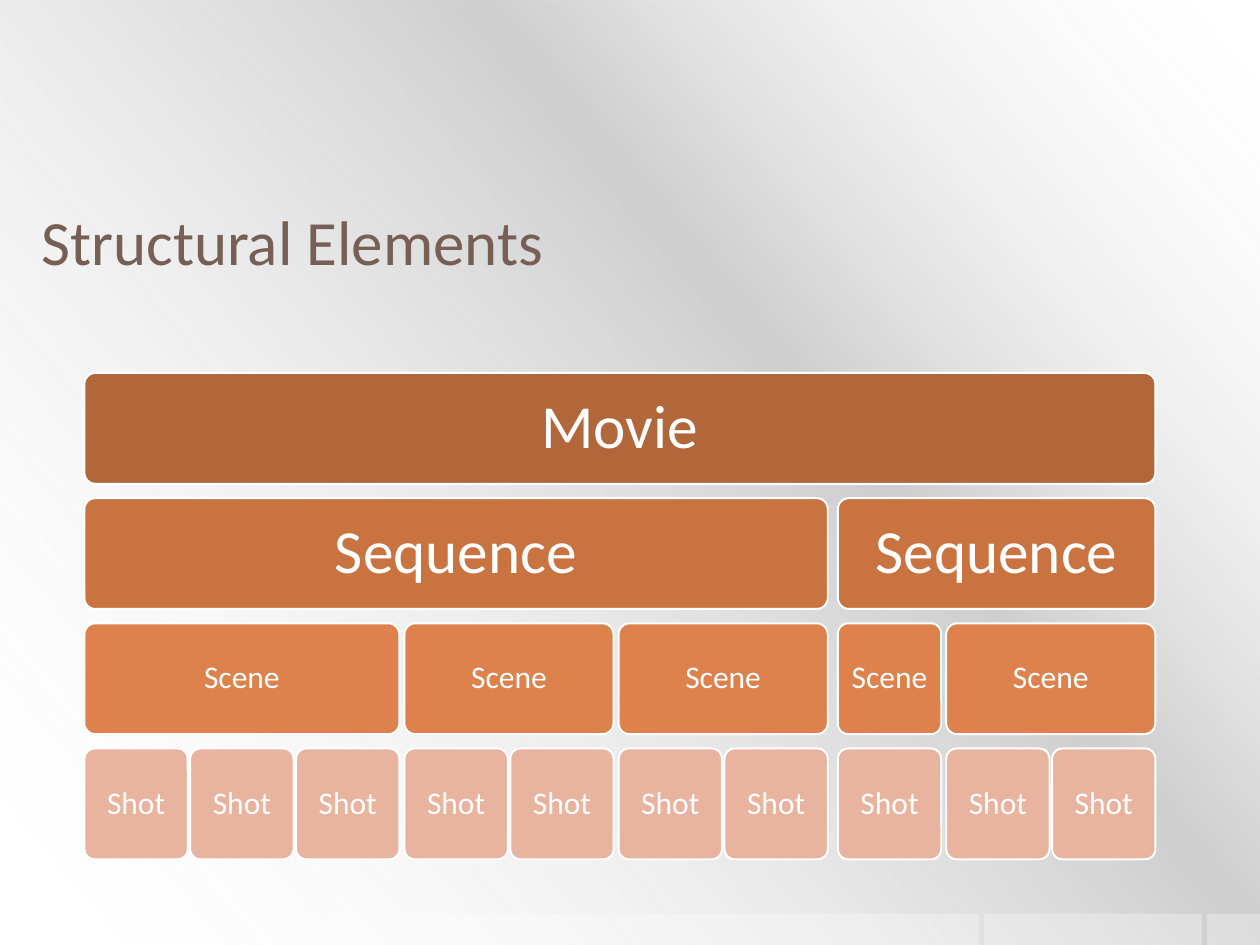
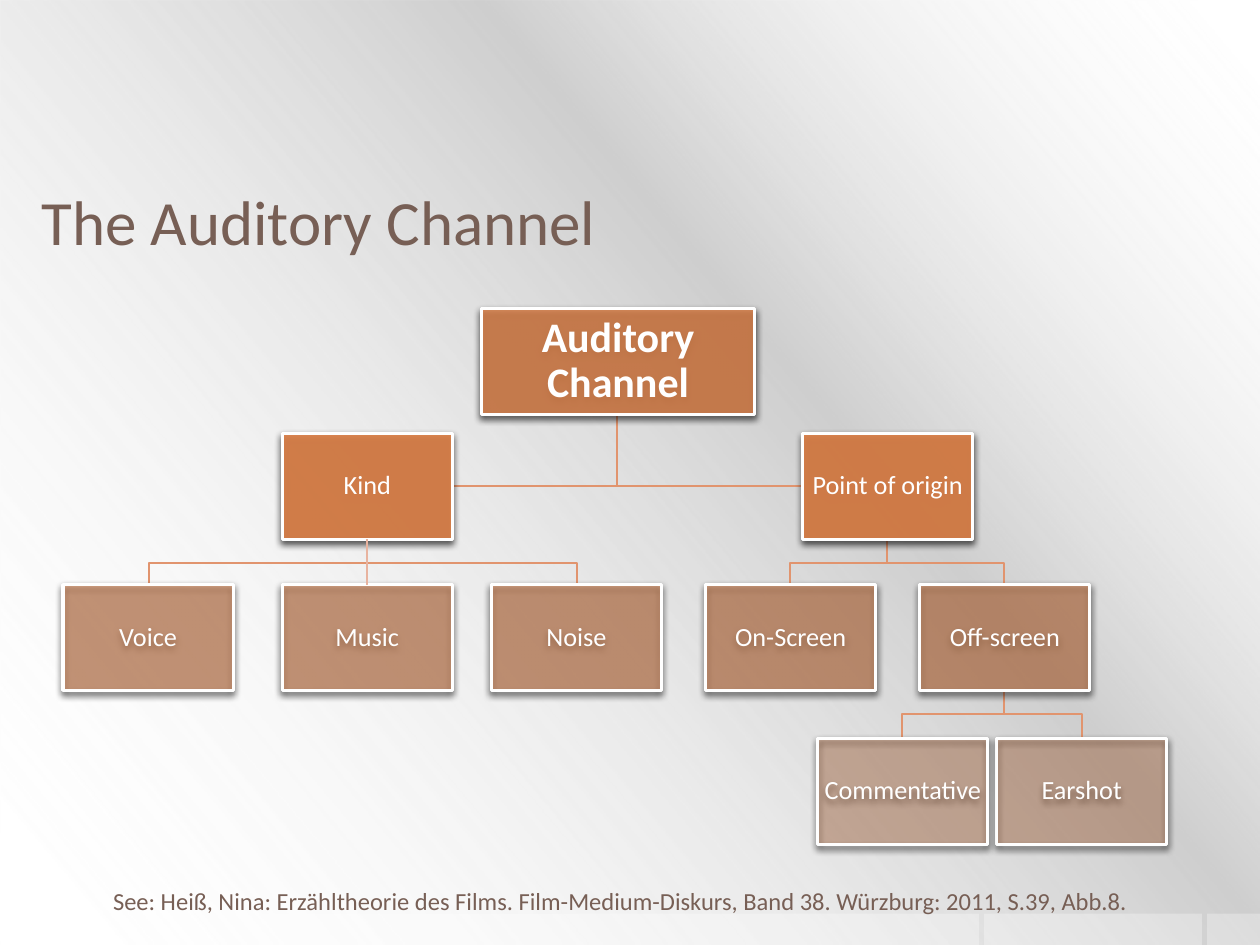
"""Build two slides on the structure and the sound of film."""
from lxml.etree import SubElement
from pptx import Presentation
from pptx.dml.color import RGBColor
from pptx.enum.shapes import MSO_CONNECTOR, MSO_SHAPE
from pptx.enum.text import MSO_ANCHOR, PP_ALIGN
from pptx.oxml import parse_xml
from pptx.oxml.ns import nsdecls, qn
from pptx.util import Inches, Pt

WHITE = RGBColor(0xFF, 0xFF, 0xFF)
BROWN = RGBColor(0x77, 0x5F, 0x55)
RUST = RGBColor(0xB1, 0x67, 0x39)
COPPER = RGBColor(0xC9, 0x74, 0x40)
ORANGE = RGBColor(0xDD, 0x82, 0x4C)
PEACH = RGBColor(0xE8, 0xB3, 0x9F)
AMBER = RGBColor(0xDD, 0x80, 0x47)
CORAL = RGBColor(0xE1, 0x94, 0x6E)


def write(shape, text, size, pads, color=WHITE, bold=False,
          align=PP_ALIGN.CENTER, anchor=MSO_ANCHOR.MIDDLE, space=0.9):
    frame = shape.text_frame
    side, edge = (Inches(pad) for pad in pads)
    looks = {"word_wrap": True, "vertical_anchor": anchor,
             "margin_left": side, "margin_right": side,
             "margin_top": edge, "margin_bottom": edge}
    for key, value in looks.items():
        setattr(frame, key, value)
    line = frame.paragraphs[0]
    line.alignment, line.line_spacing = align, space
    run = line.add_run()
    run.text = text
    for key, value in {"name": "Calibri", "size": Pt(size), "bold": bold}.items():
        setattr(run.font, key, value)
    run.font.color.rgb = color


def block(slide, kind, place, fill, alpha=100, edge=0):
    shape = slide.shapes.add_shape(kind, *map(Inches, place))
    shape.fill.solid()
    shape.fill.fore_color.rgb = fill
    if alpha < 100:
        tint = shape._element.spPr.find(".//" + qn("a:srgbClr"))
        SubElement(tint, qn("a:alpha"), val=str(alpha * 1000))
    if edge:
        shape.line.color.rgb = WHITE
        shape.line.width = Pt(edge)
    else:
        shape.line.fill.background()
    shape.shadow.inherit = False
    return shape


deck = Presentation()
deck.slide_width, deck.slide_height = Inches(10), Inches(7.5)
blank = deck.slide_layouts[6]
for holder in list(blank.placeholders):
    holder._element.getparent().remove(holder._element)
slides = [deck.slides.add_slide(blank) for _ in range(2)]
first, second = slides

sheen = block(first, MSO_SHAPE.RECTANGLE, (0, 0, 10, 7.5), WHITE)
stops = "".join(
    f'<a:gs pos="{spot * 1000}"><a:srgbClr val="{tone}">'
    f'<a:alpha val="{alpha * 1000}"/></a:srgbClr></a:gs>'
    for spot, tone, alpha in [(0, WHITE, 0), (34, "BFBFBF", 61),
                              (38, "BFBFBF", 76), (100, WHITE, 0)])
solid = sheen._element.spPr.find(qn("a:solidFill"))
solid.getparent().replace(solid, parse_xml(
    f'<a:gradFill {nsdecls("a")} rotWithShape="1"><a:gsLst>{stops}</a:gsLst>'
    f'<a:lin ang="{140 * 60000}" scaled="0"/></a:gradFill>'))
bands = [block(first, MSO_SHAPE.RECTANGLE, (left, 7.25, width, 0.25), WHITE, 30)
         for left, width in [(9.58, 0.42), (7.81, 1.73), (0, 7.77)]]
for shape in [sheen, *bands]:
    blank.shapes._spTree.append(shape._element)

titles = [("Structural Elements", 1.41), ("The Auditory Channel", 1.25)]
for slide, (text, top) in zip(slides, titles):
    title = slide.shapes.add_textbox(*map(Inches, (0.33, top, 9, 1)))
    write(title, text, 36, (0, 0.05), BROWN, align=PP_ALIGN.LEFT, space=1)

LEVELS = [("Movie", RUST, 35, 0.15), ("Sequence", COPPER, 35, 0.15),
          ("Scene", ORANGE, 18, 0.07), ("Shot", PEACH, 18, 0.07)]
FILM = [[3, 2, 2], [1, 2]]
START, STEP, GAP = 0.67, 0.84, 0.02
parts = []
left = START
for scenes in FILM:
    begin = left
    for count in scenes:
        parts.append((2, left, count * STEP - GAP))
        parts += [(3, left + i * STEP, STEP - GAP) for i in range(count)]
        left += count * STEP + GAP
    parts.append((1, begin, left - 2 * GAP - begin))
    left += 2 * GAP
parts.append((0, START, left - 4 * GAP - START))
for level, left, width in sorted(parts):
    text, fill, size, pad = LEVELS[level]
    place = (left, 2.96 + level * 2.98 / 3, width, 0.88)
    shape = block(first, MSO_SHAPE.ROUNDED_RECTANGLE, place, fill, edge=1.1)
    shape.adjustments[0] = 0.1
    write(shape, text, size, (pad, pad))

WIDE, HIGH = 1.35, 0.84
ROOT, KIND, PLACE, OFF = 4.9, 2.91, 7.04, 7.97
paths = [[(ROOT, 3.29), (ROOT, 3.86), (end, 3.86)] for end in (3.58, 6.37)]
forks = [(KIND, 4.29, 4.64, (1.18, 4.58)), (PLACE, 4.29, 4.64, (6.27, OFF)),
         (OFF, 5.48, 5.86, (7.16, 8.59))]
for stem, top, base, ends in forks:
    mid = (top + base) / 2
    paths += [[(stem, top), (stem, mid), (end, mid), (end, base)] for end in ends]
for path in paths:
    spots = [(Inches(x), Inches(y)) for x, y in path]
    pen = second.shapes.build_freeform(*spots[0])
    pen.add_line_segments(spots[1:], close=False)
    branch = pen.convert_to_shape()
    branch.fill.background()
    branch.line.color.rgb = CORAL
    branch.line.width = Pt(1.1)
    branch.shadow.inherit = False

ROWS = [(3.44, 90, [("Kind", 2.24), ("Point of origin", 6.37)]),
        (4.64, 50, [("Voice", 0.5), ("Music", 2.24), ("Noise", 3.9),
                    ("On-Screen", 5.6), ("Off-screen", 7.3)]),
        (5.86, 30, [("Earshot", 7.91), ("Commentative", 6.49)])]
nodes = [("Auditory Channel", (3.82, 2.45, 2.17, HIGH), 80, 24, 0.02)]
nodes += [(text, (left, top, WIDE, HIGH), alpha, 15, 0.01)
          for top, alpha, row in ROWS for text, left in row]
boxes = {}
for text, place, alpha, size, pad in nodes:
    box = block(second, MSO_SHAPE.RECTANGLE, place, AMBER, alpha, 1.75)
    glow = SubElement(box._element.spPr.find(qn("a:effectLst")), qn("a:outerShdw"),
                      blurRad=str(Pt(4)), dist=str(Pt(2)), dir=str(90 * 60000),
                      algn="ctr", rotWithShape="0")
    shade = SubElement(glow, qn("a:srgbClr"), val="000000")
    SubElement(shade, qn("a:alpha"), val="70000")
    write(box, text, size, (pad, pad), bold=size == 24)
    boxes[text] = box

link = second.shapes.add_connector(MSO_CONNECTOR.STRAIGHT, 0, 0, 0, 0)
link.begin_connect(boxes["Kind"], 2)
link.end_connect(boxes["Music"], 0)
link.line.color.rgb = PEACH
link.line.width = Pt(1.1)
SubElement(link._element.spPr, qn("a:effectLst"))

source = second.shapes.add_textbox(*map(Inches, (0.35, 6.98, 9.15, 0.55)))
write(source, "See: Heiß, Nina: Erzähltheorie des Films. Film-Medium-Diskurs, "
      "Band 38. Würzburg: 2011, S.39, Abb.8.", 14, (0.1, 0.05), BROWN,
      anchor=MSO_ANCHOR.TOP, space=1)

deck.save("out.pptx")
